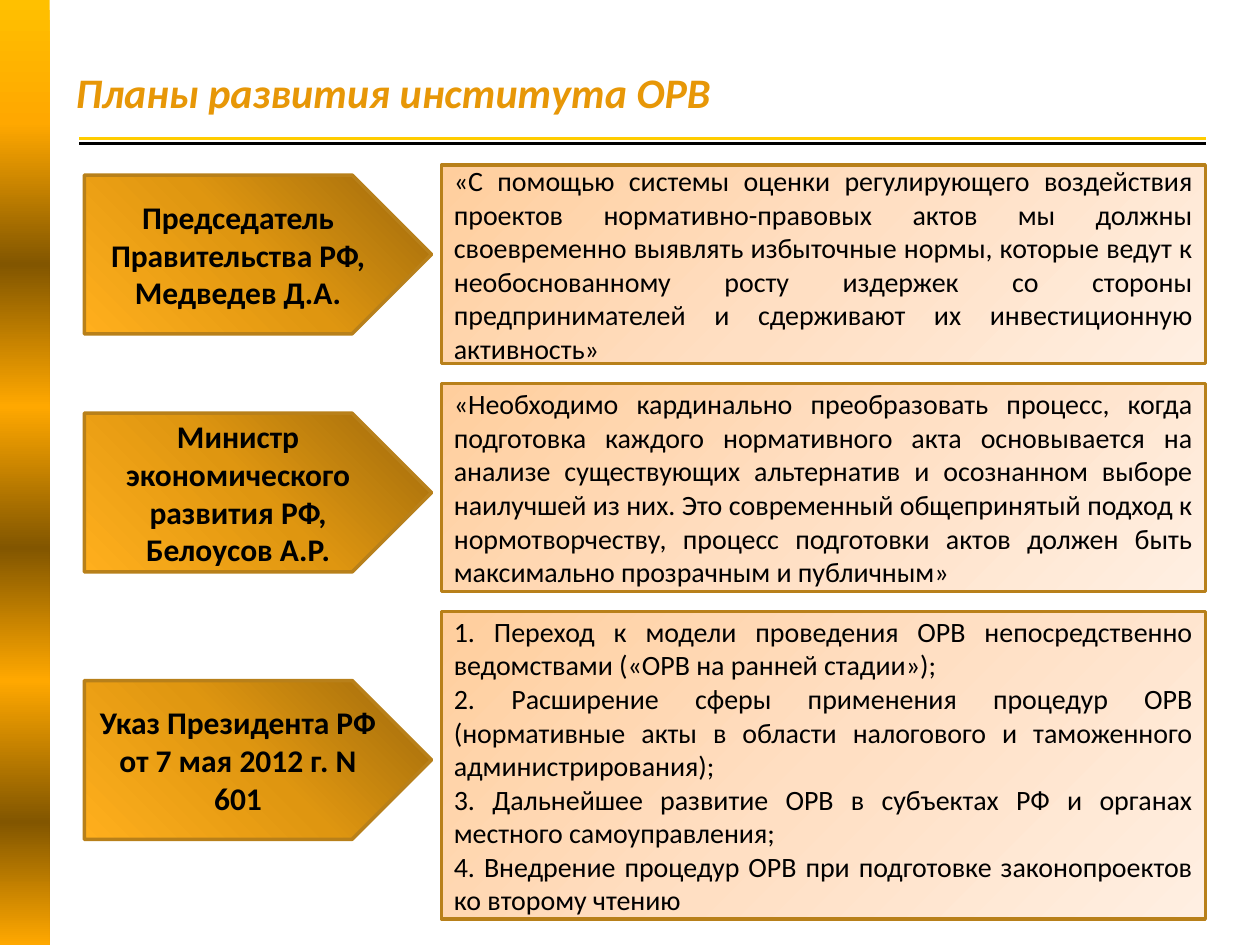
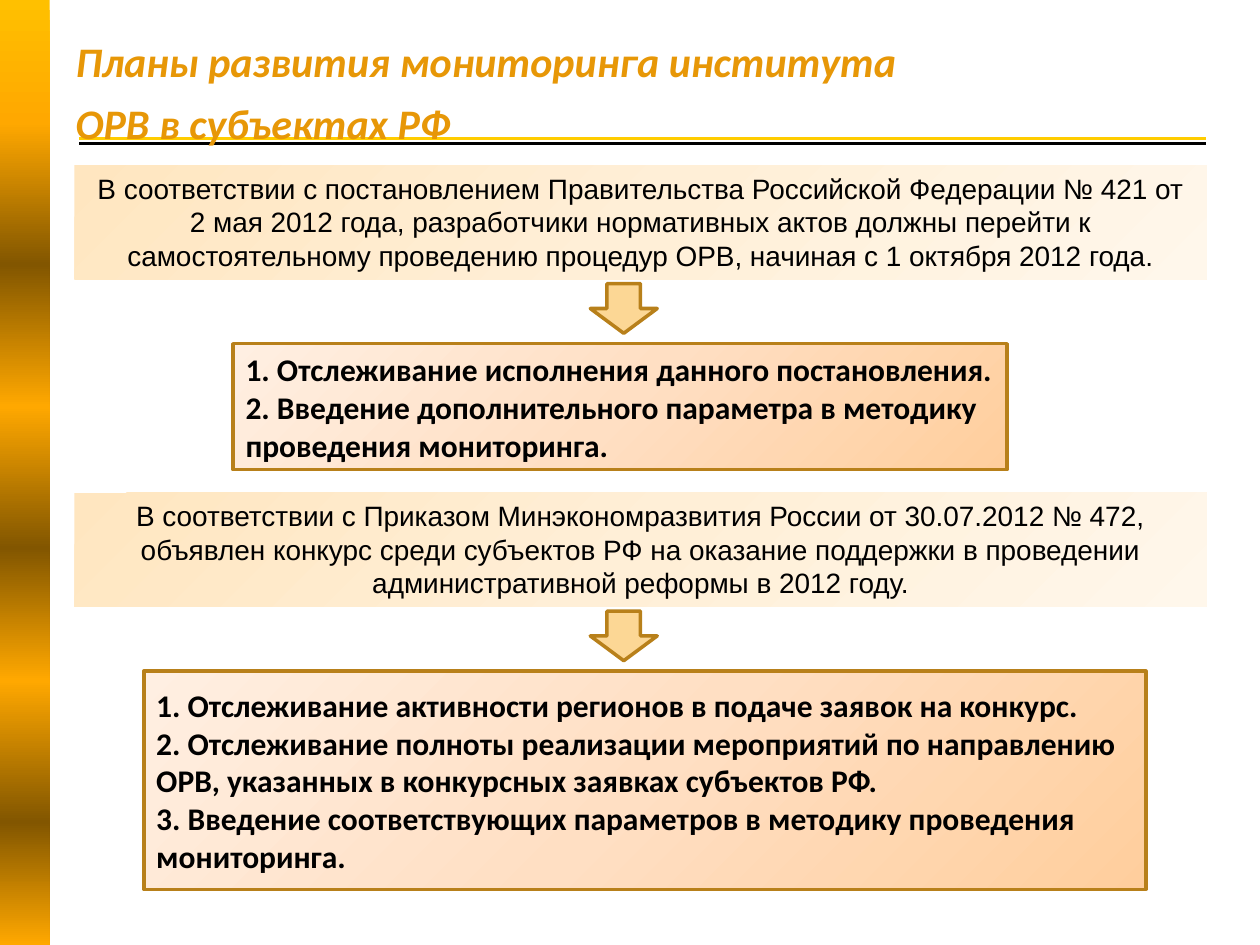
from lxml import etree
from pptx import Presentation
from pptx.dml.color import RGBColor
from pptx.enum.shapes import MSO_CONNECTOR, MSO_SHAPE
from pptx.enum.text import MSO_ANCHOR, MSO_AUTO_SIZE, PP_ALIGN
from pptx.oxml import parse_xml
from pptx.oxml.ns import nsdecls, qn
from pptx.util import Cm, Pt

RECT, PENTAGON, DOWN = MSO_SHAPE.RECTANGLE, MSO_SHAPE.PENTAGON, MSO_SHAPE.DOWN_ARROW
LEFT, CENTER, JUSTIFY = PP_ALIGN.LEFT, PP_ALIGN.CENTER, PP_ALIGN.JUSTIFY
TOP, MIDDLE = MSO_ANCHOR.TOP, MSO_ANCHOR.MIDDLE
STRAIGHT = MSO_CONNECTOR.STRAIGHT
TITLE_ONLY = 5

COLORS = {
    "title": "E79707", "text": "000000", "rule": "000000", "gold_rule": "FFCC00",
    "border": "B8801A", "arrow": "FCD795",
}
SIDE_STOPS = [(0, "FFC000"), (13, "FFA800"), (28, "825600"), (43, "FFA800"),
              (58, "825600"), (72, "FFA800"), (87, "825600"), (100, "FFA800")]
SOURCE_STOPS = [(0, "9D690B"), (50, "DF9610"), (100, "FFAF1D")]
PEACH_STOPS = [(0, "FFCE9D"), (50, "FFDFC3"), (100, "FFEFE2")]
CREAM_STOPS = [(0, "FFE6C0"), (50, "FFEFD7"), (100, "FFF7EB")]

CONTENT_TOP = 3.33
BOX_GAP = 0.4


def color(name):
    return RGBColor.from_string(COLORS[name])


def fill_gradient(shape, stops, angle):
    """Fill with (percent, hex) stops; the angle runs clockwise."""
    shape.fill.background()
    marks = "".join(f'<a:gs pos="{percent * 1000}"><a:srgbClr val="{value}"/></a:gs>'
                    for percent, value in stops)
    gradient = parse_xml(
        f'<a:gradFill {nsdecls("a")} rotWithShape="1"><a:gsLst>{marks}</a:gsLst>'
        f'<a:lin ang="{angle * 60000}" scaled="0"/></a:gradFill>')
    properties = shape.element.spPr
    properties.replace(properties.find(qn("a:noFill")), gradient)


def add_panel(page, kind, box, stops=None, angle=0, bordered=True):
    """Add a shape in box (left, top, width, height, in cm); no stops means a plain fill."""
    panel = page.shapes.add_shape(kind, *map(Cm, box))
    panel.shadow.inherit = False
    if stops:
        fill_gradient(panel, stops, angle)
    else:
        panel.fill.solid()
        panel.fill.fore_color.rgb = color("arrow")
    if bordered:
        panel.line.color.rgb = color("border")
        panel.line.width = Pt(2)
    else:
        panel.line.fill.background()
    return panel


def write(shape, text, size, font="Calibri", bold=False, align=LEFT, anchor=MIDDLE,
          ink="text"):
    frame = shape.text_frame
    frame.text = text
    frame.word_wrap = True
    frame.auto_size = MSO_AUTO_SIZE.NONE
    frame.vertical_anchor = anchor
    for para in frame.paragraphs:
        para.alignment = align
        for span in para.runs:
            span.font.name = font
            span.font.size = Pt(size)
            span.font.bold = bold
            span.font.color.rgb = color(ink)


def add_rule(page, y, ink):
    rule = page.shapes.add_connector(STRAIGHT, Cm(1.6), Cm(y), Cm(24.32), Cm(y))
    rule.line.color.rgb = color(ink)
    rule.line.width = Pt(1.75)
    etree.SubElement(rule.element.spPr, qn("a:effectLst"))


def write_title(page, text, box):
    title = page.shapes.title
    title.left, title.top, title.width, title.height = map(Cm, box)
    write(title, text, 24, bold=True, ink="title")
    para = title.text_frame.paragraphs[0]
    para.line_spacing = Pt(35)
    span = para.runs[0]
    span.font.italic = True
    shadow = parse_xml(
        f'<a:effectLst {nsdecls("a")}><a:outerShdw blurRad="38100" dist="38100" '
        'dir="2700000" algn="tl"><a:srgbClr val="000000"><a:alpha val="43000"/>'
        '</a:srgbClr></a:outerShdw></a:effectLst>')
    span.font.fill  # the shadow follows the text fill
    span.font._element.find(qn("a:solidFill")).addnext(shadow)
    page.shapes.element.append(title.element)


def add_page(deck, title, title_box):
    """Add a page with the side band, the double rule and the title."""
    page = deck.slides.add_slide(deck.slide_layouts[TITLE_ONLY])
    add_rule(page, 2.9, "rule")
    add_rule(page, 2.79, "gold_rule")
    add_panel(page, RECT, (0, 0, 1, 19.05), SIDE_STOPS, 90, bordered=False)
    write_title(page, title, title_box)
    return page


def add_statement(page, source, source_top, statement, top, height):
    """Add a pentagon naming the source and, to its right, what it says."""
    pentagon = add_panel(page, PENTAGON, (1.7, source_top, 7, 3.2), SOURCE_STOPS, 135)
    write(pentagon, source, 18, bold=True, align=CENTER)
    panel = add_panel(page, RECT, (8.9, top, 15.4, height), PEACH_STOPS, 45)
    write(panel, statement, 16, align=JUSTIFY)


def add_consequence(page, top, basis, tasks, left, width, height):
    """Add a legal basis, an arrow down and the tasks that follow from it."""
    banner = add_panel(page, RECT, (1.5, top, 22.83, 2.3), CREAM_STOPS, 45, bordered=False)
    write(banner, basis, 16, font="Arial", align=CENTER, anchor=TOP)
    add_panel(page, DOWN, (11.9, top + 2.39, 1.35, 1))
    panel = add_panel(page, RECT, (left, top + 3.6, width, height), PEACH_STOPS, 225)
    write(panel, "\n".join(tasks), 18, bold=True)


def build_institute_page(deck):
    page = add_page(deck, "Планы развития института ОРВ", (1.27, 0.33, 17.22, 2.8))
    statements = [
        ("Председатель Правительства РФ, Медведев Д.А.", 3.53, 4,
         "«С помощью системы оценки регулирующего воздействия проектов "
         "нормативно-правовых актов мы должны своевременно выявлять избыточные нормы, "
         "которые ведут к необоснованному росту издержек со стороны предпринимателей "
         "и сдерживают их инвестиционную активность»"),
        ("Министр экономического развития РФ, Белоусов А.Р.", 8.33, 4.2,
         "«Необходимо кардинально преобразовать процесс, когда подготовка каждого "
         "нормативного акта основывается на анализе существующих альтернатив и "
         "осознанном выборе наилучшей из них. Это современный общепринятый подход к "
         "нормотворчеству, процесс подготовки актов должен быть максимально "
         "прозрачным и публичным»"),
        ("Указ Президента РФ от 7 мая 2012 г. N 601", 13.72, 6.2,
         "1. Переход к модели проведения ОРВ непосредственно ведомствами "
         "(«ОРВ на ранней стадии»);\n"
         "2. Расширение сферы применения процедур ОРВ (нормативные акты в области "
         "налогового и таможенного администрирования);\n"
         "3. Дальнейшее развитие ОРВ в субъектах РФ и органах местного "
         "самоуправления;\n"
         "4. Внедрение процедур ОРВ при подготовке законопроектов ко второму чтению"),
    ]
    top = CONTENT_TOP
    for source, source_top, height, statement in statements:
        add_statement(page, source, source_top, statement, top, height)
        top += height + BOX_GAP


def build_monitoring_page(deck):
    page = add_page(deck, "Планы развития мониторинга института ОРВ в субъектах РФ",
                    (1.27, 0.76, 17.42, 1.96))
    add_consequence(
        page, CONTENT_TOP,
        "В соответствии с постановлением Правительства Российской Федерации № 421 от "
        "2 мая 2012 года, разработчики нормативных актов должны перейти к "
        "самостоятельному проведению процедур ОРВ, начиная с 1 октября 2012 года.",
        ["1. Отслеживание исполнения данного постановления.",
         "2. Введение дополнительного параметра в методику проведения мониторинга."],
        left=4.7, width=15.6, height=2.54)
    add_consequence(
        page, CONTENT_TOP + 6.6,
        "В соответствии с Приказом Минэкономразвития России от 30.07.2012 № 472, "
        "объявлен конкурс среди субъектов РФ на оказание поддержки в проведении "
        "административной реформы в 2012 году.",
        ["1. Отслеживание активности регионов в подаче заявок на конкурс.",
         "2. Отслеживание полноты реализации мероприятий по направлению ОРВ, "
         "указанных в конкурсных заявках субъектов РФ.",
         "3. Введение соответствующих параметров в методику проведения мониторинга."],
        left=2.9, width=20.2, height=4.4)


def main():
    deck = Presentation()
    deck.slide_width, deck.slide_height = Cm(25.4), Cm(19.05)
    build_institute_page(deck)
    build_monitoring_page(deck)
    deck.save("out.pptx")


if __name__ == "__main__":
    main()
